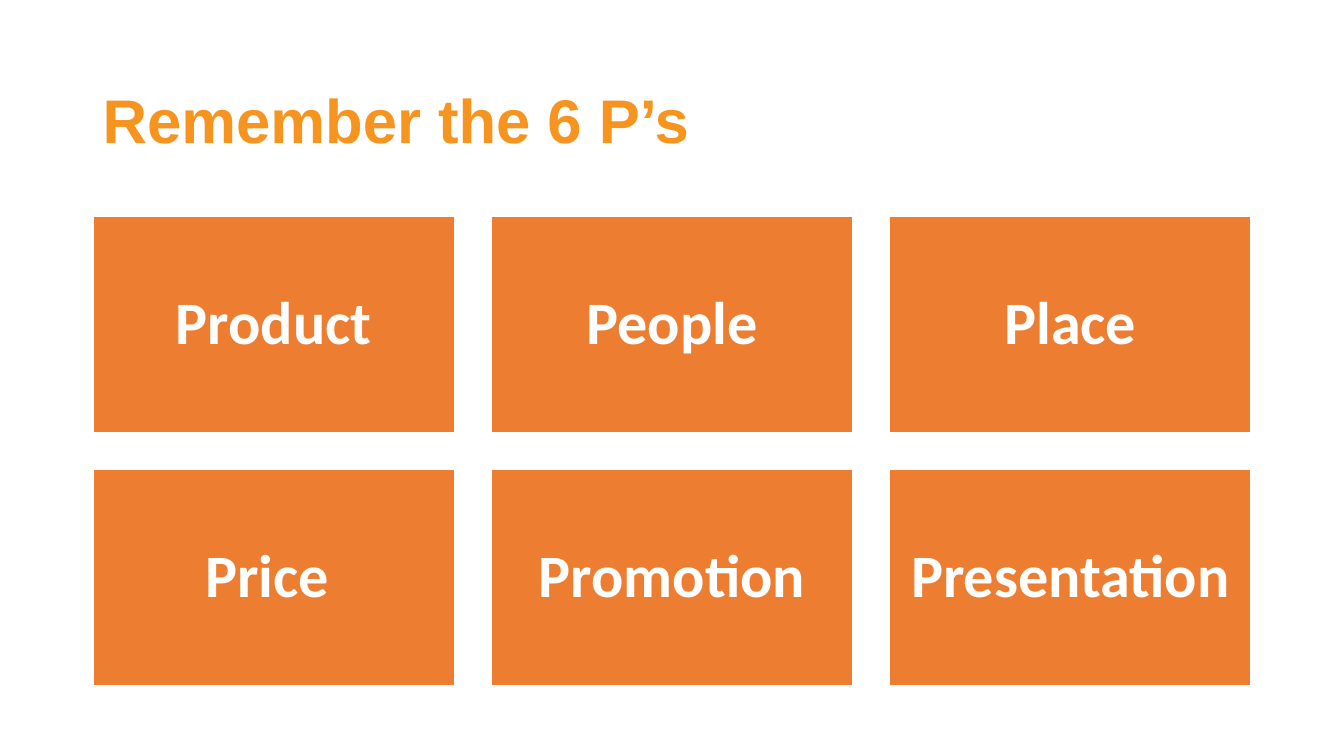
from pptx import Presentation
from pptx.dml.color import RGBColor
from pptx.enum.shapes import MSO_SHAPE
from pptx.enum.text import MSO_ANCHOR, PP_ALIGN
from pptx.util import Inches, Pt

RECT = MSO_SHAPE.RECTANGLE
MIDDLE = MSO_ANCHOR.MIDDLE
LEFT, CENTER = PP_ALIGN.LEFT, PP_ALIGN.CENTER

COLORS = {"title": "F6941F", "tile": "ED7D31", "white": "FFFFFF"}
TILES = [
    ["Product", "People", "Place"],
    ["Price ", "Promotion", "Presentation"],
]


class Deck:
    """Holds the style, the tile grid and the current slide."""

    left, top = 0.92, 2.14
    tile_w, tile_h = 3.59, 2.16
    col_step, row_step = 3.95, 2.51
    inset = 0.18

    def __init__(self):
        self.prs = Presentation()
        self.prs.slide_width = Inches(13.33)
        self.prs.slide_height = Inches(7.5)
        self.s = self.prs.slides.add_slide(self.prs.slide_layouts[6])

    def color(self, name):
        return RGBColor.from_string(COLORS[name])

    def set_text(self, sp, text, font, size, color, align):
        tf = sp.text_frame
        tf.word_wrap = True
        tf.vertical_anchor = MIDDLE
        p = tf.paragraphs[0]
        p.text = text
        p.alignment = align
        p.line_spacing = 0.9
        p.font.name = font
        p.font.size = Pt(size)
        p.font.bold = True
        p.font.color.rgb = self.color(color)
        return tf

    def title(self, text):
        sp = self.s.shapes.add_textbox(
            Inches(self.left), Inches(0.5), Inches(11.5), Inches(1.45))
        self.set_text(sp, text, "Arial", 44, "title", LEFT)

    def tile(self, col, row, text):
        sp = self.s.shapes.add_shape(
            RECT,
            Inches(self.left + col * self.col_step),
            Inches(self.top + row * self.row_step),
            Inches(self.tile_w), Inches(self.tile_h))
        sp.shadow.inherit = False
        sp.fill.solid()
        sp.fill.fore_color.rgb = self.color("tile")
        sp.line.color.rgb = self.color("white")
        sp.line.width = Pt(1.5)
        tf = self.set_text(sp, text, "Calibri", 43, "white", CENTER)
        tf.margin_left = tf.margin_right = Inches(self.inset)
        tf.margin_top = tf.margin_bottom = Inches(self.inset)


def main():
    deck = Deck()
    deck.title("Remember the 6 P’s")
    for row, words in enumerate(TILES):
        for col, word in enumerate(words):
            deck.tile(col, row, word)
    deck.prs.save("out.pptx")


if __name__ == "__main__":
    main()
